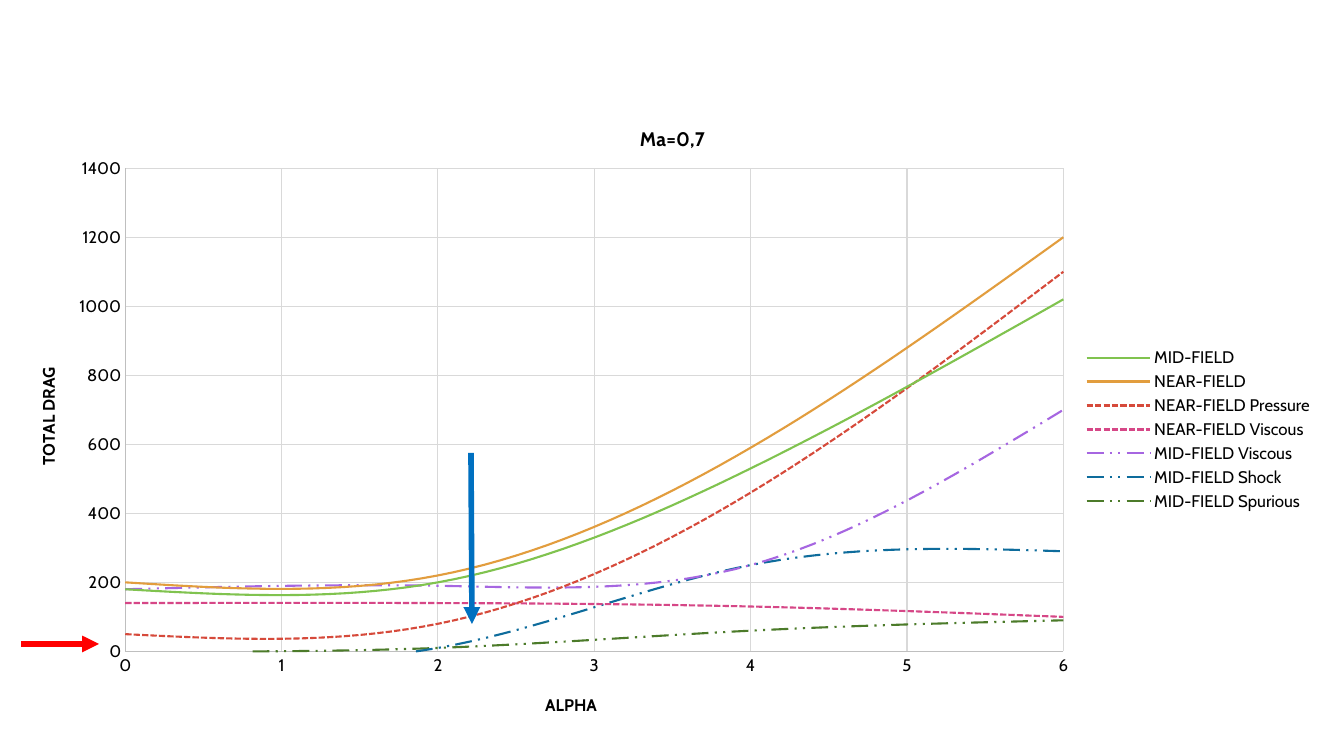
import lxml.etree
import pptx
import pptx.chart.data
import pptx.dml.color
import pptx.enum.chart
import pptx.enum.dml
import pptx.enum.shapes
import pptx.oxml
import pptx.oxml.ns
import pptx.util

RGB = pptx.dml.color.RGBColor
DASH = pptx.enum.dml.MSO_LINE
KIND = pptx.enum.chart

BLACK = RGB(0, 0, 0)
RED = RGB(255, 0, 0)
BLUE = RGB(0, 112, 192)
GRID = RGB(217, 217, 217)
AXIS = RGB(191, 191, 191)
GREEN = RGB(128, 195, 79)
GOLD = RGB(226, 157, 62)
BRICK = RGB(214, 74, 59)
PINK = RGB(214, 71, 135)
VIOLET = RGB(166, 102, 225)
TEAL = RGB(14, 108, 156)
MOSS = RGB(76, 123, 42)

FONT = "Cabin"
SOLID, SHORT, LONG = DASH.SOLID, DASH.SQUARE_DOT, DASH.DASH_DOT_DOT
ALPHA = [0, 2, 4, 6]
CURVES = [
    ("MID-FIELD", [180, 200, 530, 1020], GREEN, SOLID),
    ("NEAR-FIELD", [200, 220, 590, 1200], GOLD, SOLID),
    ("NEAR-FIELD Pressure", [50, 80, 460, 1100], BRICK, SHORT),
    ("NEAR-FIELD Viscous", [140, 140, 130, 100], PINK, SHORT),
    ("MID-FIELD Viscous", [180, 190, 250, 700], VIOLET, LONG),
    ("MID-FIELD Shock", [0, 10, 250, 290], TEAL, LONG),
    ("MID-FIELD Spurious", [0, 10, 60, 90], MOSS, LONG),
]
ARROWS = [((21, 644), (99, 644), RED), ((471, 453), (472, 624), BLUE)]
SIZE = (1344, 756)
CHART = (21, 103, 1303, 653)
PLOT = {"x": 0.08, "y": 0.1, "w": 0.72, "h": 0.74}


def px(n):
    """Turn pixels into EMU."""
    return round(n * 914400 / 100.8)


def write(frame, text, size=12, bold=True, color=BLACK):
    """Put formatted text into a frame."""
    run = frame.paragraphs[0].add_run()
    run.text = text
    font = run.font
    font.name, font.size, font.bold = FONT, pptx.util.Pt(size), bold
    font.color.rgb = color


def stroke(line, color, width):
    """Set the colour and width of a line."""
    line.color.rgb = color
    line.width = pptx.util.Pt(width)


def place(node, index, inner=False, **spots):
    """Give a chart part a fixed place."""
    qn = pptx.oxml.ns.qn
    old = node.find(qn("c:layout"))
    if old is not None:
        node.remove(old)
    layout = pptx.oxml.parse_xml("<c:layout %s/>" % pptx.oxml.ns.nsdecls("c"))
    manual = lxml.etree.SubElement(layout, qn("c:manualLayout"))
    parts = [("layoutTarget", "inner")] if inner else []
    parts += [("xMode", "edge"), ("yMode", "edge")] + list(spots.items())
    for name, val in parts:
        lxml.etree.SubElement(manual, qn("c:" + name)).set("val", str(val))
    node.insert(index, layout)


def style(axis, title, top, step, grid, x, y):
    """Format one axis and its title."""
    axis.minimum_scale, axis.maximum_scale, axis.major_unit = 0, top, step
    axis.major_tick_mark = axis.minor_tick_mark = KIND.XL_TICK_MARK.NONE
    axis.has_major_gridlines = True
    stroke(axis.major_gridlines.format.line, GRID, grid)
    stroke(axis.format.line, AXIS, 0.75)
    axis.tick_labels.number_format = "General"
    axis.tick_labels.number_format_is_linked = False
    write(axis.axis_title.text_frame, title)
    place(axis.axis_title._element, 1, x=x, y=y)


def draw(slide):
    """Add the drag chart."""
    data = pptx.chart.data.XyChartData()
    for name, drags, _, _ in CURVES:
        curve = data.add_series(name)
        for alpha, drag in zip(ALPHA, drags):
            curve.add_data_point(alpha, drag)
    kind = KIND.XL_CHART_TYPE.XY_SCATTER_SMOOTH_NO_MARKERS
    chart = slide.shapes.add_chart(kind, *map(px, CHART), data).chart
    chart.font.name, chart.font.size = FONT, pptx.util.Pt(12)
    chart.font.color.rgb = BLACK
    write(chart.chart_title.text_frame, "Ma=0,7", size=14)
    chart.has_legend = True
    chart.legend.position = KIND.XL_LEGEND_POSITION.RIGHT
    chart.legend.include_in_layout = False
    style(chart.category_axis, "ALPHA", 6, 1, 0.75, 0.4, 0.9)
    style(chart.value_axis, "TOTAL DRAG", 1400, 200, 0.5, 0.01, 0.4)
    plot = chart.plots[0]
    plot.vary_by_categories = False
    place(plot._element.getparent(), 0, inner=True, **PLOT)
    for curve, (_, _, color, dash) in zip(plot.series, CURVES):
        curve._element.get_or_add_smooth().val = True
        curve.marker.style = KIND.XL_MARKER_STYLE.NONE
        stroke(curve.format.line, color, 1.5)
        curve.format.line.dash_style = dash


def point(slide, start, end, color):
    """Add an arrow."""
    kind = pptx.enum.shapes.MSO_CONNECTOR.STRAIGHT
    arrow = slide.shapes.add_connector(kind, *map(px, start + end))
    stroke(arrow.line, color, 4)
    qn = pptx.oxml.ns.qn
    tail = lxml.etree.SubElement(arrow.line._get_or_add_ln(), qn("a:tailEnd"))
    tail.set("type", "triangle")
    lxml.etree.SubElement(arrow._element.spPr, qn("a:effectLst"))


def main():
    """Build the slide and save it."""
    deck = pptx.Presentation()
    deck.slide_width, deck.slide_height = map(px, SIZE)
    slide = deck.slides.add_slide(deck.slide_layouts[6])
    draw(slide)
    for start, end, color in ARROWS:
        point(slide, start, end, color)
    deck.save("out.pptx")


if __name__ == "__main__":
    main()
